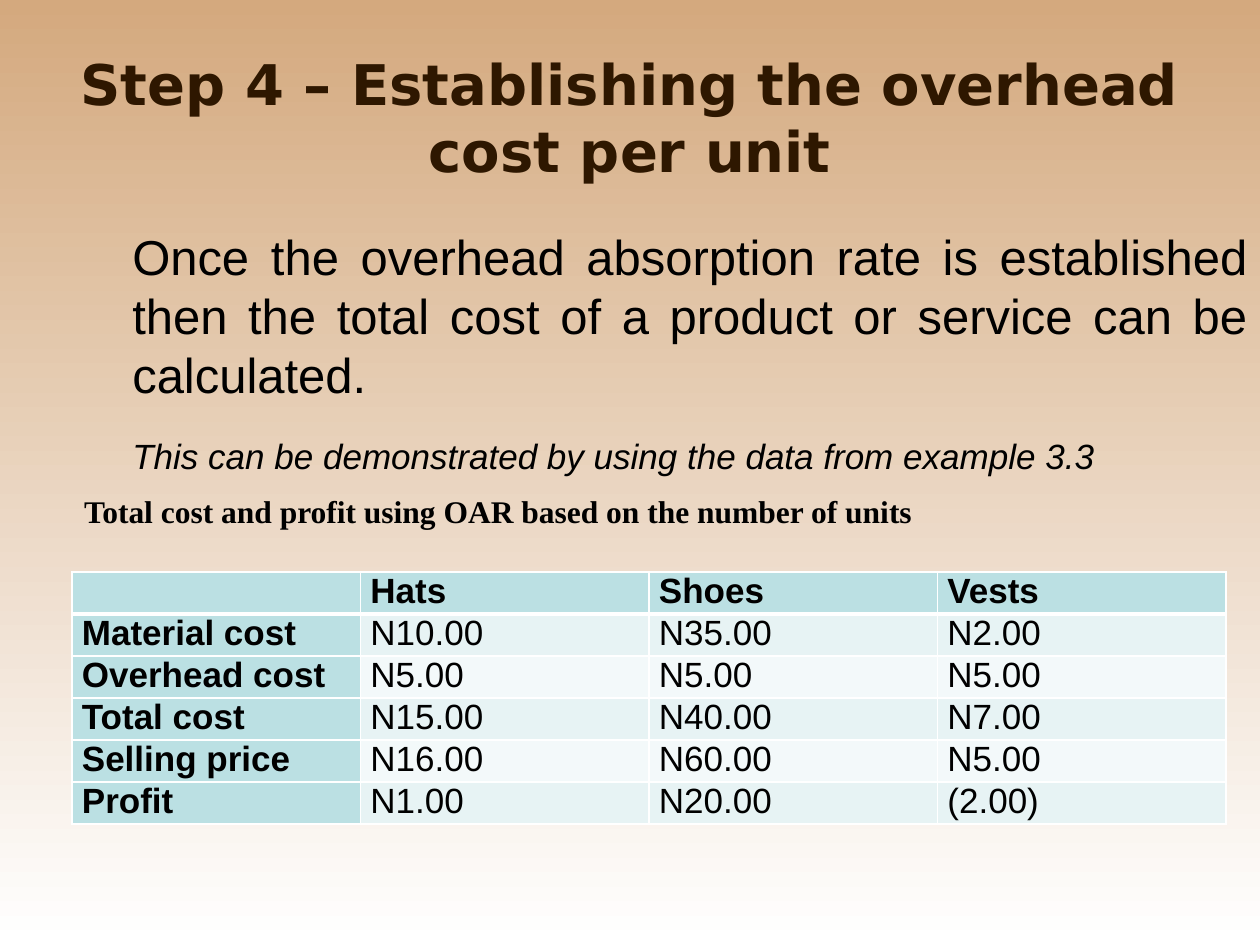
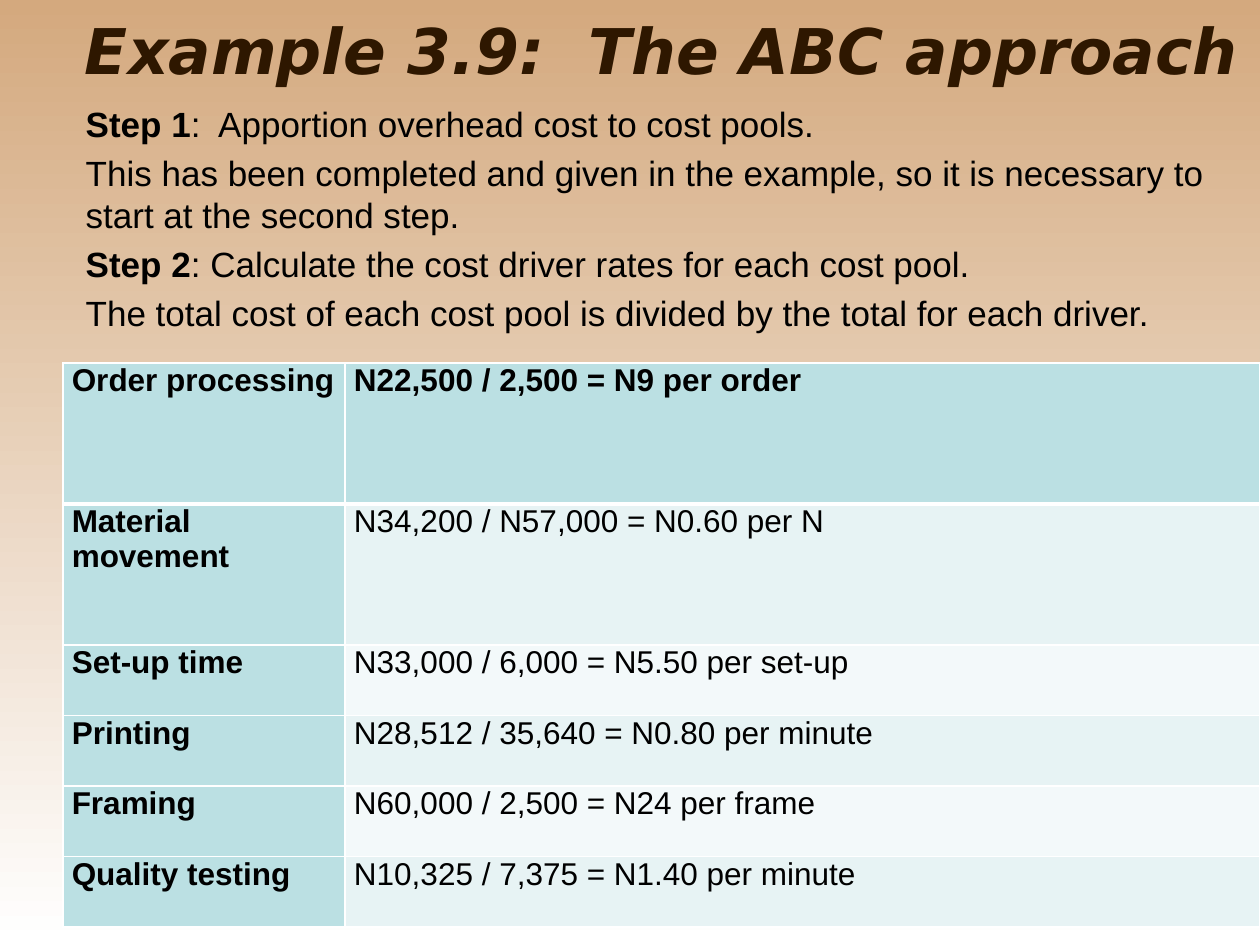
from dataclasses import dataclass

from lxml.etree import SubElement
from pptx import Presentation
from pptx.dml.color import RGBColor
from pptx.enum.text import MSO_ANCHOR, MSO_AUTO_SIZE, PP_ALIGN
from pptx.oxml.ns import qn
from pptx.util import Inches, Pt


@dataclass(frozen=True)
class Theme:
    sand: RGBColor = RGBColor(0xD4, 0xA9, 0x7E)
    white: RGBColor = RGBColor(0xFF, 0xFF, 0xFF)
    brown: RGBColor = RGBColor(0x2E, 0x17, 0x00)
    black: RGBColor = RGBColor(0x00, 0x00, 0x00)
    header: RGBColor = RGBColor(0xBB, 0xE0, 0xE3)
    bands: tuple = (RGBColor(0xF3, 0xF9, 0xFA), RGBColor(0xE7, 0xF3, 0xF4))
    title_font: str = "DejaVu Sans"
    body_font: str = "Arial"
    caption_font: str = "Times New Roman"
    title_size: int = 32
    example_title_size: int = 36
    lead_size: int = 28
    text_size: int = 20
    small_size: int = 18


theme = Theme()


def style(paragraph, size, name=theme.body_font, color=theme.black, bold=False, italic=False):
    font = paragraph.font
    font.name, font.size, font.color.rgb = name, Pt(size), color
    font.bold, font.italic = bold, italic


def add_cost_table(slide, rows, left, top, widths, heights, size, margin, has_header):
    frame = slide.shapes.add_table(
        len(rows), len(widths), Inches(left), Inches(top),
        Inches(sum(widths)), Inches(sum(heights)))
    table = frame.table
    for column, width in zip(table.columns, widths):
        column.width = Inches(width)
    for row_index, texts in enumerate(rows):
        table.rows[row_index].height = Inches(heights[row_index])
        for column_index, text in enumerate(texts):
            cell = table.cell(row_index, column_index)
            cell.margin_left = cell.margin_right = Inches(margin)
            cell.margin_top = cell.margin_bottom = 0
            cell.text = text
            is_heading = row_index == 0 or column_index == 0
            paragraph = cell.text_frame.paragraphs[0]
            paragraph.alignment = PP_ALIGN.JUSTIFY
            style(paragraph, size, bold=is_heading)
            thick_sides = {0: "B", 1: "T"}.get(row_index, "")
            for side in "LRTB":
                width = Pt(3 if side in thick_sides else 1)
                line = SubElement(cell._tc.get_or_add_tcPr(), qn(f"a:ln{side}"), w=str(width))
                fill = SubElement(line, qn("a:solidFill"))
                SubElement(fill, qn("a:srgbClr"), val=str(theme.white))
            cell.fill.solid()
            cell.fill.fore_color.rgb = theme.header if is_heading else theme.bands[row_index % 2]


presentation = Presentation()
presentation.slide_width, presentation.slide_height = Inches(10), Inches(7.5)

background = presentation.slide_master.background.fill
background.gradient()
background.gradient_angle = 270
for stop, color in zip(background.gradient_stops, (theme.sand, theme.white)):
    stop.color.rgb = color

contents = [
    {
        "title": "Step 4 – Establishing the overhead cost per unit",
        "title_box": (0.5, 0.3, 9, 1.25),
        "title_size": theme.title_size,
        "title_italic": False,
        "body_box": (0.57, 1.75, 9.43, 2.08),
        "alignment": PP_ALIGN.JUSTIFY,
        "paragraphs": [
            ("", "Once the overhead absorption rate is established then the total cost "
                 "of a product or service can be calculated.", theme.lead_size, False, 0),
            ("", "This can be demonstrated by using the data from example 3.3",
             theme.text_size, True, 18),
        ],
        "table": {
            "rows": [
                ("", "Hats", "Shoes", "Vests"),
                ("Material cost", "N10.00", "N35.00", "N2.00"),
                ("Overhead cost", "N5.00", "N5.00", "N5.00"),
                ("Total cost", "N15.00", "N40.00", "N7.00"),
                ("Selling price", "N16.00", "N60.00", "N5.00"),
                ("Profit", "N1.00", "N20.00", "(2.00)"),
            ],
            "left": 0.57, "top": 4.54, "widths": [2.29] * 4, "heights": [2 / 6] * 6,
            "size": theme.text_size, "margin": 0.08, "has_header": True,
        },
    },
    {
        "title": "Example 3.9:  The ABC approach",
        "title_box": (0.5, -0.11, 9.5, 1.01),
        "title_size": theme.example_title_size,
        "title_italic": True,
        "body_box": (0.2, 0.76, 9.8, 6.62),
        "alignment": PP_ALIGN.LEFT,
        "paragraphs": [
            ("Step 1", ":  Apportion overhead cost to cost pools.", theme.text_size, False, 0),
            ("", "This has been completed and given in the example, so it is necessary "
                 "to start at the second step.", theme.text_size, False, 4),
            ("Step 2", ": Calculate the cost driver rates for each cost pool.",
             theme.text_size, False, 4),
            ("", "The total cost of each cost pool is divided by the total for each driver.",
             theme.text_size, False, 4),
        ],
        "table": {
            "rows": [
                ("Order processing", "N22,500 / 2,500 = N9 per order"),
                ("Material movement", "N34,200 / N57,000 = N0.60 per N"),
                ("Set-up time", "N33,000 / 6,000 = N5.50 per set-up"),
                ("Printing", "N28,512 / 35,640 = N0.80 per minute"),
                ("Framing", "N60,000 / 2,500 = N24 per frame"),
                ("Quality testing", "N10,325 / 7,375 = N1.40 per minute"),
            ],
            "left": 0.5, "top": 2.88, "widths": [2.24, 7.26],
            "heights": [1.12] * 2 + [0.56] * 4,
            "size": theme.small_size, "margin": 0.07, "has_header": True,
        },
    },
]

slides = []
for content in contents:
    slide = presentation.slides.add_slide(presentation.slide_layouts[1])
    slides.append(slide)
    title, body = slide.shapes.title, slide.placeholders[1]
    for shape, box in ((title, content["title_box"]), (body, content["body_box"])):
        shape.left, shape.top, shape.width, shape.height = map(Inches, box)
        shape.text_frame.auto_size = MSO_AUTO_SIZE.NONE
        shape.text_frame.word_wrap = True

    title.text_frame.text = content["title"]
    title.text_frame.vertical_anchor = MSO_ANCHOR.MIDDLE
    heading = title.text_frame.paragraphs[0]
    heading.alignment = PP_ALIGN.CENTER
    style(heading, content["title_size"], theme.title_font, theme.brown,
          bold=True, italic=content["title_italic"])

    for index, (label, text, size, italic, gap) in enumerate(content["paragraphs"]):
        text_frame = body.text_frame
        paragraph = text_frame.add_paragraph() if index else text_frame.paragraphs[0]
        paragraph.alignment = content["alignment"]
        paragraph.space_before = Pt(gap)
        properties = paragraph._p.get_or_add_pPr()
        properties.set("marL", str(Inches(0.38)))
        properties.set("indent", "0")
        SubElement(properties, qn("a:buNone"))
        style(paragraph, size, italic=italic)
        if label:
            run = paragraph.add_run()
            run.text = label
            run.font.bold = True
        paragraph.add_run().text = text

    add_cost_table(slide, **content["table"])

caption = slides[0].shapes.add_textbox(Inches(0.57), Inches(3.86), Inches(9.43), Inches(0.4))
caption.text_frame.word_wrap = True
caption.text_frame.auto_size = MSO_AUTO_SIZE.SHAPE_TO_FIT_TEXT
caption.text_frame.text = "Total cost and profit using OAR based on the number of units"
style(caption.text_frame.paragraphs[0], theme.small_size, theme.caption_font, bold=True)

presentation.save("out.pptx")
